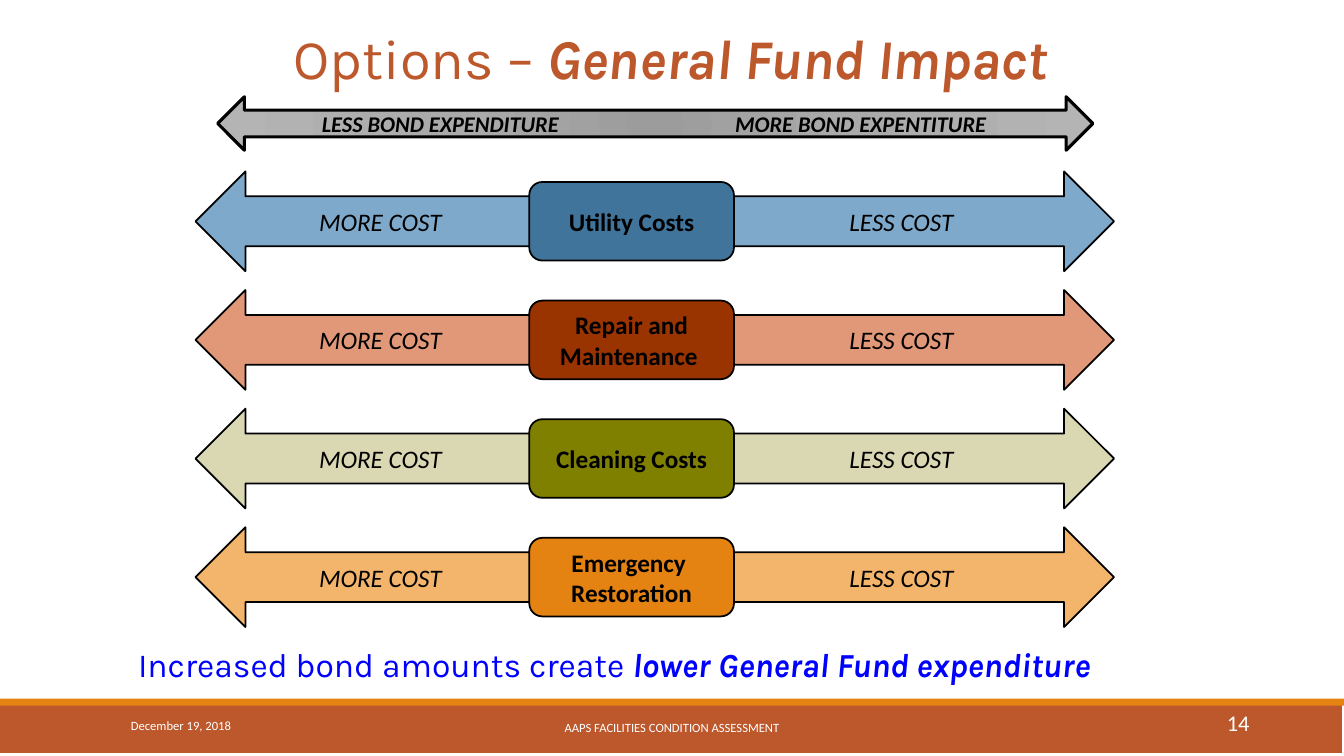
from pptx import Presentation, util as u
from pptx.dml.color import RGBColor
from pptx.enum import shapes, text
from pptx.oxml import parse_xml
from pptx.oxml.ns import nsdecls, qn

SHAPE = shapes.MSO_SHAPE
ALIGN = text.PP_ALIGN
MID, TOP = text.MSO_ANCHOR.MIDDLE, text.MSO_ANCHOR.TOP

BLACK, WHITE, BLUE = "000000", "FFFFFF", "0000FF"
RUST, ORANGE = "BD582C", "E48312"

# label, box colour, arrow colour
COSTS = [
    ("Utility Costs", "40749B", "7EA9CA"),
    ("Repair and Maintenance ", "993300", "E09878"),
    ("Cleaning Costs", "808000", "DAD7B3"),
    ("Emergency \nRestoration", ORANGE, "F3B56C"),
]
FIRST, PITCH = 22.67, 15.69


def color(code):
    return RGBColor.from_string(code)


class Deck:
    """Places elements by percent of the slide's width and height."""

    def __init__(self):
        self.prs = Presentation()
        self.prs.slide_width = u.Inches(13.33)
        self.prs.slide_height = u.Inches(7.5)
        self.page = self.prs.slides.add_slide(self.prs.slide_layouts[6])

    def area(self, left, top, width, height):
        wide, high = self.prs.slide_width, self.prs.slide_height
        return [int(part * full / 100) for part, full in
                zip((left, top, width, height), (wide, high, wide, high))]

    def style(self, run, size, ink, bold=False, slant=False, face="Calibri"):
        font = run.font
        font.name, font.size = face, u.Pt(size)
        font.bold, font.italic = bold, slant
        font.color.rgb = color(ink)

    def shape(self, kind, box, fill, line=0):
        item = self.page.shapes.add_shape(kind, *self.area(*box))
        item.shadow.inherit = False
        item.fill.solid()
        item.fill.fore_color.rgb = color(fill)
        if line:
            item.line.color.rgb = color(BLACK)
            item.line.width = u.Pt(line)
        else:
            item.line.fill.background()
        return item

    def label(self, item, words, size=18, align=ALIGN.CENTER, **look):
        frame = item.text_frame
        frame.text = words
        frame.word_wrap = True
        frame.vertical_anchor = MID
        for para in frame.paragraphs:
            para.alignment = align
            for run in para.runs:
                self.style(run, size, BLACK, **look)

    def note(self, box, words, size, ink, align=ALIGN.LEFT, face="Calibri",
             strong="", anchor=MID, space=1.0):
        """Adds a line of text that may end in a bold italic part."""
        frame = self.page.shapes.add_textbox(*self.area(*box)).text_frame
        frame.word_wrap = True
        frame.vertical_anchor = anchor
        para = frame.paragraphs[0]
        para.text = words
        para.alignment, para.line_spacing = align, space
        self.style(para.runs[0], size, ink, face=face)
        if strong:
            run = para.add_run()
            run.text = strong
            self.style(run, size, ink, True, True, face)

    def scale(self, box, left, right):
        """Adds the grey double arrow with a phrase on each side."""
        item = self.shape(SHAPE.LEFT_RIGHT_ARROW, box, "AAAAAA", 2.25)
        stops = "".join(
            f'<a:gs pos="{pos}000"><a:srgbClr val="{code}"/></a:gs>'
            for pos, code in ((0, "9C9C9C"), (45, "AAAAAA"), (100, "B4B4B4")))
        props = item._element.spPr
        solid = props.find(qn("a:solidFill"))
        props.replace(solid, parse_xml(
            f'<a:gradFill {nsdecls("a")}><a:gsLst>{stops}</a:gsLst>'
            '<a:path path="circle"><a:fillToRect l="50000" t="50000" '
            'r="50000" b="50000"/></a:path></a:gradFill>'))
        self.label(item, f"{left}\t{right}", 16, ALIGN.LEFT,
                   bold=True, slant=True)
        item.text_frame.margin_left = u.Inches(0.9)
        para = item.text_frame.paragraphs[0]
        para._p.get_or_add_pPr().append(parse_xml(
            f'<a:tabLst {nsdecls("a")}>'
            f'<a:tab pos="{u.Inches(4.1)}" algn="l"/></a:tabLst>'))

    def cost(self, top, name, dark, light):
        """Adds one row: two arrows and the box between them."""
        for kind, left, width, words in (
                (SHAPE.LEFT_ARROW, 14.55, 25.66, "MORE COST"),
                (SHAPE.RIGHT_ARROW, 53.11, 29.78, "LESS COST")):
            arrow = self.shape(kind, (left, top, width, 13.2), light, 1.25)
            self.label(arrow, words, slant=True)
        box = self.shape(SHAPE.ROUNDED_RECTANGLE,
                         (39.38, top + 1.4, 15.23, 10.4), dark, 1.25)
        self.label(box, name, bold=True)


def main():
    deck = Deck()
    deck.shape(SHAPE.RECTANGLE, (0, 92.93, 99.85, 6.67), RUST)
    deck.shape(SHAPE.RECTANGLE, (0, 92.4, 100, 0.93), ORANGE)
    deck.note((1.13, 2.93, 97.52, 10.67), "Options – ", 40, RUST,
              ALIGN.CENTER, "Karla", "General Fund Impact", space=0.85)
    deck.note((9, 93.33, 20.25, 5.33), "December 19, 2018", 9, WHITE)
    deck.note((30.23, 93.6, 39.53, 5.33),
              "AAPS FACILITIES CONDITION ASSESSMENT", 9, WHITE, ALIGN.CENTER)
    deck.note((82.97, 92.93, 10.73, 5.33), "14", 16, WHITE, ALIGN.RIGHT)
    deck.note((9.53, 84.53, 77.49, 6.67), "Increased bond amounts create ",
              24, BLUE, face="Karla",
              strong="lower General Fund expenditure", anchor=TOP)
    for row, cost in enumerate(COSTS):
        deck.cost(FIRST + row * PITCH, *cost)
    deck.scale((16.2, 12.8, 65.12, 7.07),
               "LESS BOND EXPENDITURE", "MORE BOND EXPENTITURE")
    deck.prs.save("out.pptx")


if __name__ == "__main__":
    main()
